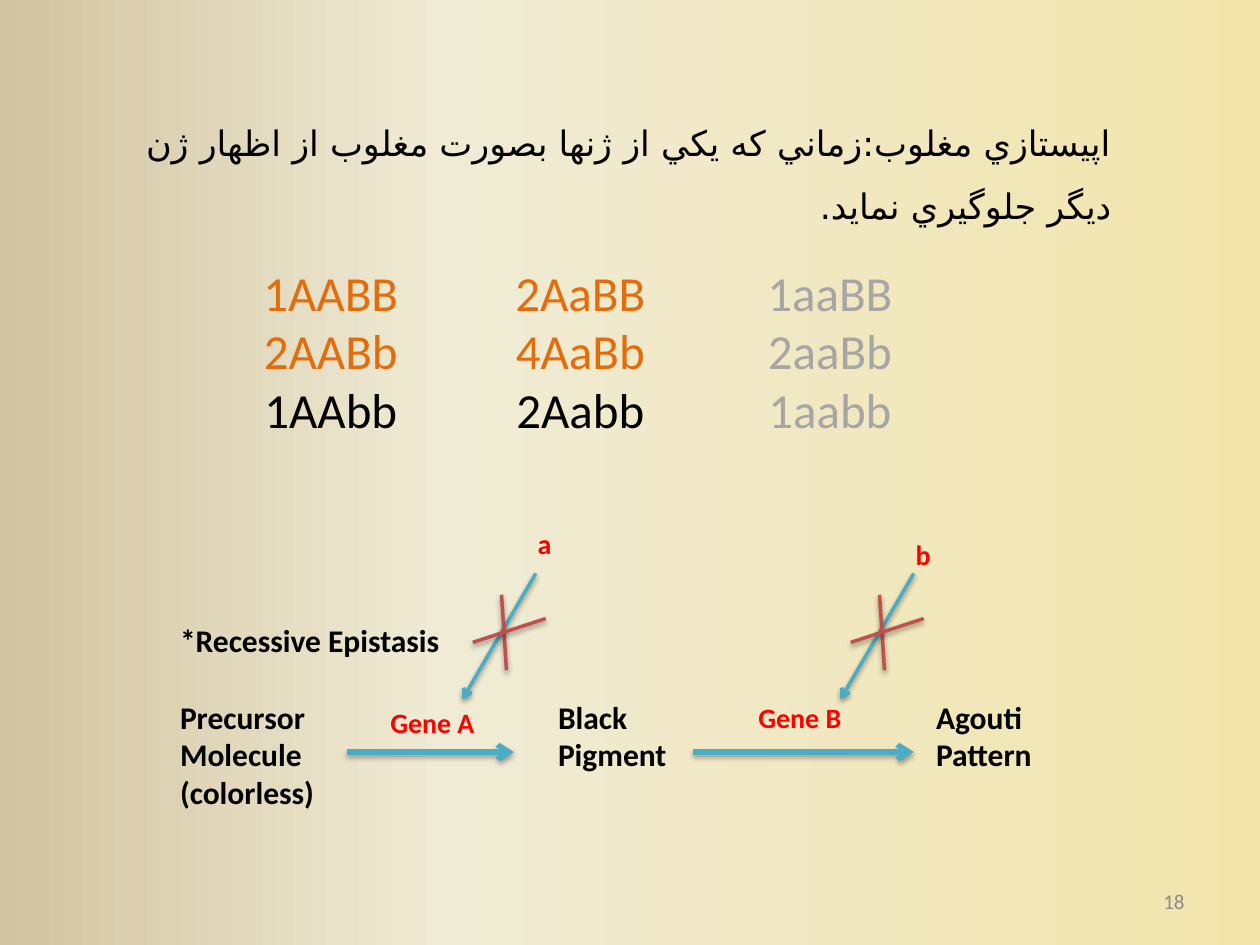
from lxml import etree
from pptx import Presentation
from pptx.dml.color import RGBColor
from pptx.enum.shapes import MSO_CONNECTOR
from pptx.enum.text import MSO_ANCHOR, MSO_AUTO_SIZE, PP_ALIGN
from pptx.oxml.ns import qn
from pptx.util import Cm, Pt

LEFT, CENTER, RIGHT = PP_ALIGN.LEFT, PP_ALIGN.CENTER, PP_ALIGN.RIGHT
TOP, MIDDLE = MSO_ANCHOR.TOP, MSO_ANCHOR.MIDDLE
GROW = MSO_AUTO_SIZE.SHAPE_TO_FIT_TEXT
STRAIGHT = MSO_CONNECTOR.STRAIGHT

BLACK, RED, ORANGE = "000000", "FF0000", "E46C0A"
GRAY, NUMBER_GRAY = "A6A6A6", "8C8C8C"
TEAL, CROSS_RED = "4BACC6", "C0504D"


def rgb(value):
    return RGBColor.from_string(value)


def add_xml(parent, tag, **attrs):
    return etree.SubElement(parent, qn(tag), attrs)


class SlideBuilder:
    font = "Calibri"
    arabic_font = "DejaVu Sans"
    tab_step, tab_count = 2.54, 7

    def __init__(self, s):
        self.s = s
        self.shapes = s.shapes

    def background(self, stops, angle):
        fill = self.s.background.fill
        fill.gradient()
        fill.gradient_angle = angle
        stop_list = next(self.s.element.iter(qn("a:gsLst")))
        for old in list(stop_list):
            stop_list.remove(old)
        for percent, color in stops:
            stop = add_xml(stop_list, "a:gs", pos=str(percent * 1000))
            add_xml(stop, "a:srgbClr", val=color)

    def text(self, box, lines, size, color=BLACK, bold=False, align=LEFT,
             anchor=TOP, grow=True):
        """Each line is a string or a list of (text, color) runs."""
        sp = self.shapes.add_textbox(*map(Cm, box))
        tf = sp.text_frame
        tf.word_wrap = True
        tf.vertical_anchor = anchor
        if grow:
            tf.auto_size = GROW
        for i, line in enumerate(lines):
            p = tf.paragraphs[0] if i == 0 else tf.add_paragraph()
            p.alignment = align
            p.font.name, p.font.size, p.font.bold = self.font, Pt(size), bold
            if isinstance(line, str):
                p.font.color.rgb = rgb(color)
                p.add_run().text = line
                continue
            for words, run_color in line:
                r = p.add_run()
                r.text = words
                r.font.color.rgb = rgb(run_color)
        return tf

    def tab_stops(self, tf):
        for p in tf.paragraphs:
            props = p._p.get_or_add_pPr()
            tabs = etree.Element(qn("a:tabLst"))
            for i in range(1, self.tab_count + 1):
                add_xml(tabs, "a:tab", pos=str(Cm(i * self.tab_step)), algn="l")
            props.find(qn("a:defRPr")).addprevious(tabs)

    def right_to_left(self, p):
        props = p._p.get_or_add_pPr()
        props.set("rtl", "1")
        add_xml(props.find(qn("a:defRPr")), "a:cs", typeface=self.arabic_font)

    def line(self, x1, y1, x2, y2, color, width=2, arrow=False):
        cx = self.shapes.add_connector(STRAIGHT, Cm(x1), Cm(y1), Cm(x2), Cm(y2))
        cx.line.color.rgb = rgb(color)
        cx.line.width = Pt(width)
        if arrow:
            add_xml(cx.line._get_or_add_ln(), "a:tailEnd", type="arrow")
        # Soft shadow straight below; heavier lines have a lighter one
        distance, alpha = (1.8, 35) if width > 2 else (1.6, 38)
        effects = add_xml(cx._element.spPr, "a:effectLst")
        shadow = add_xml(effects, "a:outerShdw", blurRad=str(Pt(3.1)),
                         dist=str(Pt(distance)), dir="5400000",
                         rotWithShape="0")
        shade = add_xml(shadow, "a:srgbClr", val=BLACK)
        add_xml(shade, "a:alpha", val=str(alpha * 1000))

    def label(self, x, y, w, words):
        self.text((x, y, w, 0.94), [words], 16, RED, bold=True)

    def blocked_gene(self, x, label_y, allele):
        """Crossed-out arrow whose tip is at x, with its allele above."""
        self.line(x + 1.48, 11.56, x, 14.1, TEAL, arrow=True)
        self.label(x + 1.27, label_y, 0.84, allele)
        self.line(x + 0.79, 11.99, x + 0.89, 13.51, CROSS_RED)
        self.line(x + 1.68, 12.47, x + 0.21, 12.95, CROSS_RED)


def main():
    prs = Presentation()
    prs.slide_width, prs.slide_height = Cm(25.4), Cm(19.05)
    s = prs.slides.add_slide(prs.slide_layouts[6])
    b = SlideBuilder(s)
    b.background([(0, "F2E5AC"), (65, "F0EBD5"), (100, "D1C39F")], 180)

    # Slide number
    b.text((18.21, 17.65, 5.92, 1.02), ["18"], 12, NUMBER_GRAY,
           align=RIGHT, anchor=MIDDLE, grow=False)

    # Pigment pathway, kept together as one group
    b.shapes = s.shapes.add_group_shape().shapes
    b.line(13.97, 15.16, 18.42, 15.16, TEAL, 3, arrow=True)
    tf = b.text((3.38, 12.4, 18.62, 4.11),
                ["*Recessive Epistasis",
                 "Precursor \t\tBlack \t\t\tAgouti",
                 "Molecule\t\t\tPigment\t\t\tPattern",
                 "(colorless)"], 18, bold=True)
    tf.paragraphs[1].space_before = Pt(22)
    b.tab_stops(tf)
    b.line(6.99, 15.16, 10.36, 15.16, TEAL, 3, arrow=True)
    b.label(7.62, 14.1, 2.54, "Gene A")
    b.label(15.04, 14, 2.54, "Gene B")
    b.blocked_gene(9.32, 10.49, "a")
    b.blocked_gene(16.94, 10.72, "b")
    b.shapes = s.shapes

    # Genotype ratios
    genotypes = [("1AABB\t2AaBB\t", ORANGE, "1aaBB"),
                 ("2AABb\t4AaBb\t", ORANGE, "2aaBb"),
                 ("1AAbb\t2Aabb\t", BLACK, "1aabb")]
    tf = b.text((3.18, 5.16, 16.94, 5.21),
                [[(shown, color), (masked, GRAY)]
                 for shown, color, masked in genotypes], 28, align=CENTER)
    b.tab_stops(tf)

    # Definition, read from right to left
    tf = b.text((2.34, 1.9, 20.32, 1.55),
                ["اپيستازي مغلوب:زماني كه يكي از ژنها بصورت مغلوب از اظهار ژن "
                 "ديگر جلوگيري نمايد."], 20, align=RIGHT)
    p = tf.paragraphs[0]
    p.line_spacing = 1.5
    b.right_to_left(p)

    prs.save("out.pptx")


if __name__ == "__main__":
    main()
